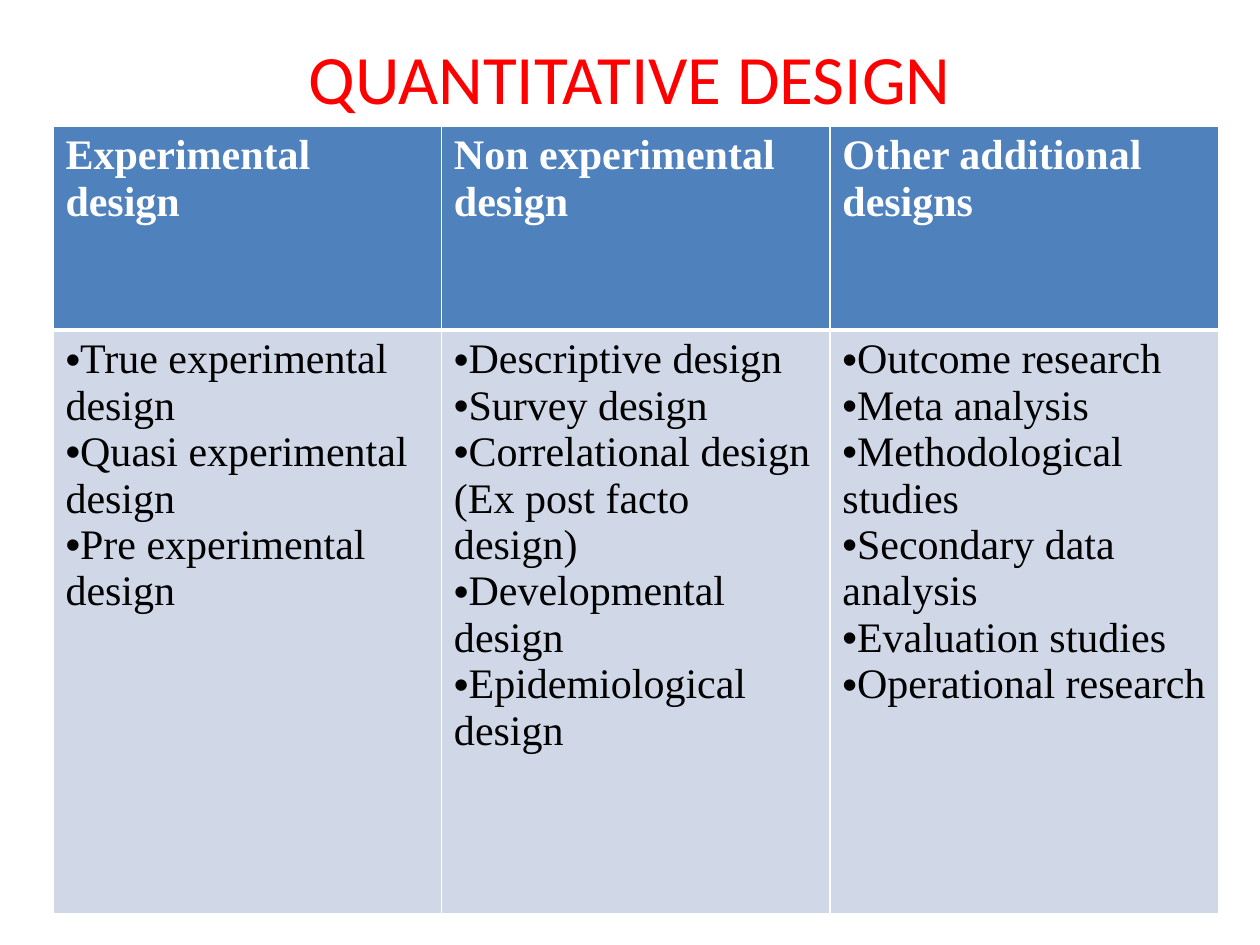
import pptx
import pptx.util
import pptx.dml.color
import pptx.enum.text
import pptx.oxml.ns
from lxml import etree

Inches, Pt = pptx.util.Inches, pptx.util.Pt

# Content: one entry per column, heading and bullet list
TITLE = "QUANTITATIVE DESIGN"
DESIGNS = [
    ("Experimental design", [
        "True experimental design",
        "Quasi experimental design",
        "Pre experimental design",
    ]),
    ("Non experimental design", [
        "Descriptive design",
        "Survey design",
        "Correlational design (Ex post facto design)",
        "Developmental design",
        "Epidemiological design",
    ]),
    ("Other additional designs", [
        "Outcome research",
        "Meta analysis",
        "Methodological studies",
        "Secondary data analysis",
        "Evaluation studies",
        "Operational research",
    ]),
]
COLORS = {"title": "FF0000", "header": "4F81BD", "body": "D0D8E8",
          "border": "FFFFFF", "header_text": "FFFFFF", "body_text": "000000"}
ROW_HEIGHTS = [1.62, 4.63]
TABLE_LEFT, TABLE_TOP, TABLE_WIDTH = 0.42, 1, 9.25


def rgb(name):
    return pptx.dml.color.RGBColor.from_string(COLORS[name])


def add_run(paragraph, text, font_name, size, color, bold=False):
    run = paragraph.add_run()
    run.text = text
    run.font.name = font_name
    run.font.size = Pt(size)
    run.font.bold = bold
    run.font.color.rgb = rgb(color)


def add_child(parent, tag, **attributes):
    child = etree.SubElement(parent, pptx.oxml.ns.qn(tag))
    for key, value in attributes.items():
        child.set(key, str(value))
    return child


def set_borders(cell, widths):
    properties = cell._tc.get_or_add_tcPr()
    for side, width in zip("LRTB", widths):
        line = add_child(properties, f"a:ln{side}", w=Pt(width))
        fill = add_child(line, "a:solidFill")
        add_child(fill, "a:srgbClr", val=COLORS["border"])


def fill_cell(cell, lines, kind, borders, bulleted):
    set_borders(cell, borders)
    cell.fill.solid()
    cell.fill.fore_color.rgb = rgb(kind)
    for index, line in enumerate(lines):
        frame = cell.text_frame
        paragraph = frame.paragraphs[0] if index == 0 else frame.add_paragraph()
        if bulleted:
            properties = paragraph._p.get_or_add_pPr()
            add_child(properties, "a:buFont", typeface="Arial")
            add_child(properties, "a:buChar", char="•")
        add_run(paragraph, line, "Times New Roman", 24, f"{kind}_text", not bulleted)


presentation = pptx.Presentation()
presentation.slide_width, presentation.slide_height = Inches(10), Inches(7.5)
slide = presentation.slides.add_slide(presentation.slide_layouts[6])

# Title
title = slide.shapes.add_textbox(Inches(0.5), Inches(0.3), Inches(9), Inches(0.62))
title.text_frame.word_wrap = True
title.text_frame.vertical_anchor = pptx.enum.text.MSO_ANCHOR.MIDDLE
title_paragraph = title.text_frame.paragraphs[0]
title_paragraph.alignment = pptx.enum.text.PP_ALIGN.CENTER
add_run(title_paragraph, TITLE, "Calibri", 39.6, "title")

# Table with equal columns
table = slide.shapes.add_table(
    len(ROW_HEIGHTS), len(DESIGNS), Inches(TABLE_LEFT), Inches(TABLE_TOP),
    Inches(TABLE_WIDTH), Inches(sum(ROW_HEIGHTS))).table
for row, height in zip(table.rows, ROW_HEIGHTS):
    row.height = Inches(height)
for column, (heading, designs) in enumerate(DESIGNS):
    table.columns[column].width = Inches(TABLE_WIDTH / len(DESIGNS))
    fill_cell(table.cell(0, column), [heading], "header", (1, 1, 1, 3), False)
    fill_cell(table.cell(1, column), designs, "body", (1, 1, 3, 1), True)

presentation.save("out.pptx")
